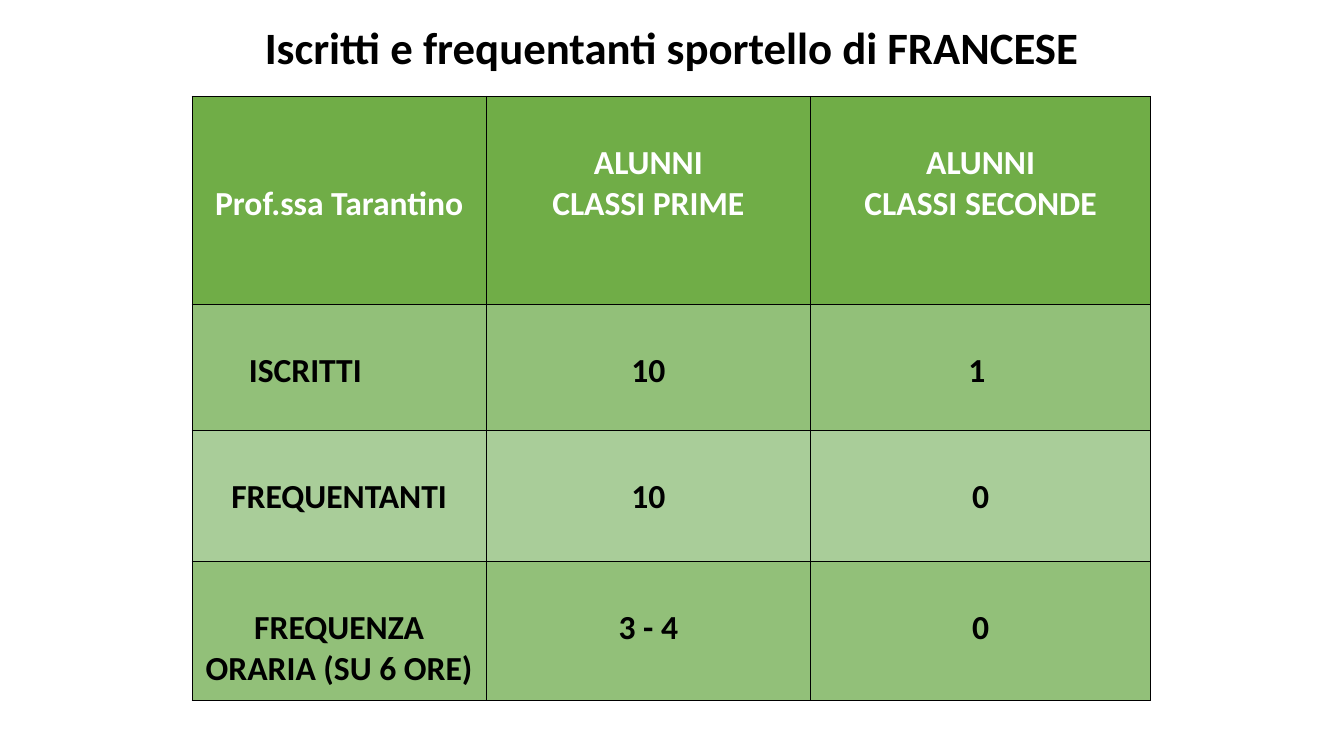
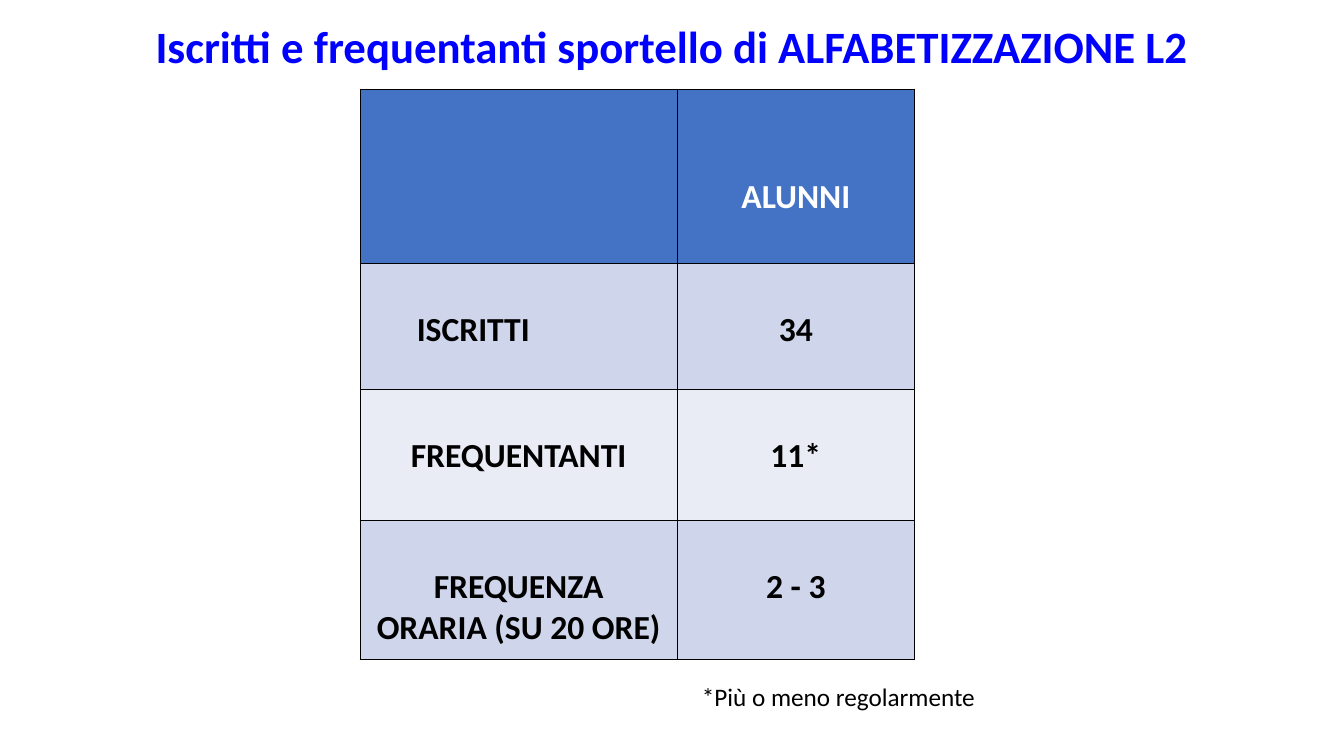
from dataclasses import dataclass

from lxml.etree import SubElement
from pptx import Presentation
from pptx.dml.color import RGBColor
from pptx.enum.text import MSO_ANCHOR, PP_ALIGN
from pptx.oxml.ns import qn
from pptx.slide import Slide
from pptx.table import _Cell
from pptx.text.text import TextFrame
from pptx.util import Emu, Pt

PX = 9525


@dataclass(frozen=True)
class Theme:
    font: str = "Calibri"
    black: str = "000000"
    white: str = "FFFFFF"
    blue: str = "0000FF"
    head: int = 32
    body: int = 24
    note: int = 18
    rule: int = 1
    line: int = 39
    pad: int = 5


@dataclass(frozen=True)
class Box:
    left: int
    top: int
    width: int
    height: int


@dataclass(frozen=True)
class Style:
    size: int
    color: str
    bold: bool = True
    align: PP_ALIGN = PP_ALIGN.CENTER


@dataclass(frozen=True)
class Entry:
    text: str
    lead: int = 1
    inset: int = 0


@dataclass(frozen=True)
class Grid:
    left: int
    top: int
    cols: tuple[int, ...]
    rows: tuple[int, ...]
    fills: tuple[str, ...]
    cells: tuple[tuple[Entry, ...], ...]


@dataclass(frozen=True)
class Page:
    title: str
    color: str
    top: int
    grid: Grid
    note: str = ""


THEME = Theme()
BODY = (120, 125, 132)
NOTE = Box(659, 644, 324, 38)
GREEN = ("70AD47", "92C079", "A9CD99", "92C079")
AZURE = ("4472C4", "CFD5EA", "E9EBF5", "CFD5EA")


def px(count: int) -> Emu:
    return Emu(count * PX)


def body(hours: int, *values: tuple[str, ...]) -> tuple[tuple[Entry, ...], ...]:
    heads = (
        Entry("ISCRITTI", inset=44),
        Entry("FREQUENTANTI"),
        Entry(f"FREQUENZA\nORARIA (SU {hours} ORE)"),
    )
    return tuple((head, *map(Entry, row)) for head, row in zip(heads, values))


PAGES = (
    Page(
        "Iscritti e frequentanti sportello di FRANCESE", THEME.black, 14,
        Grid(
            183, 92, (280, 309, 324), (198, *BODY), GREEN,
            (
                (
                    Entry("Prof.ssa Tarantino", lead=2),
                    Entry("ALUNNI\nCLASSI PRIME"),
                    Entry("ALUNNI\nCLASSI SECONDE"),
                ),
                *body(6, ("10", "1 "), ("10", "0"), ("3 - 4", "0")),
            ),
        ),
    ),
    Page(
        "Iscritti e frequentanti sportello di ALFABETIZZAZIONE L2", THEME.blue, 13,
        Grid(
            343, 85, (302, 226), (166, *BODY), AZURE,
            (
                (Entry(""), Entry("ALUNNI", lead=2)),
                *body(20, ("34",), ("11*",), ("2 - 3",)),
            ),
        ),
        "*Più o meno regolarmente",
    ),
)


def write(frame: TextFrame, text: str, style: Style) -> None:
    frame.text = text
    frame.word_wrap = True
    for para in frame.paragraphs:
        para.alignment = style.align
        for run in para.runs:
            run.font.name = THEME.font
            run.font.size = Pt(style.size)
            run.font.bold = style.bold
            run.font.color.rgb = RGBColor.from_string(style.color)


def label(slide: Slide, box: Box, text: str, style: Style) -> None:
    shape = slide.shapes.add_textbox(
        px(box.left), px(box.top), px(box.width), px(box.height)
    )
    write(shape.text_frame, text, style)


def border(cell: _Cell) -> None:
    props = cell._tc.get_or_add_tcPr()
    for side in ("a:lnL", "a:lnR", "a:lnT", "a:lnB"):
        line = SubElement(props, qn(side), w=str(Pt(THEME.rule)))
        fill = SubElement(line, qn("a:solidFill"))
        SubElement(fill, qn("a:srgbClr"), val=THEME.black)


def paint(cell: _Cell, entry: Entry, fill: str, color: str) -> None:
    border(cell)
    cell.fill.solid()
    cell.fill.fore_color.rgb = RGBColor.from_string(fill)
    cell.vertical_anchor = MSO_ANCHOR.TOP
    cell.margin_top = px(THEME.pad + entry.lead * THEME.line)
    cell.margin_bottom = px(THEME.pad)
    cell.margin_left = px(2 * THEME.pad + entry.inset)
    cell.margin_right = px(2 * THEME.pad)
    align = PP_ALIGN.LEFT if entry.inset else PP_ALIGN.CENTER
    write(cell.text_frame, entry.text, Style(THEME.body, color, align=align))


def draw(slide: Slide, grid: Grid) -> None:
    table = slide.shapes.add_table(
        len(grid.rows), len(grid.cols), px(grid.left), px(grid.top),
        px(sum(grid.cols)), px(sum(grid.rows)),
    ).table
    table.first_row = table.horz_banding = False
    for col, width in zip(table.columns, grid.cols):
        col.width = px(width)
    for row, height in zip(table.rows, grid.rows):
        row.height = px(height)
    for r, (line, fill) in enumerate(zip(grid.cells, grid.fills)):
        color = THEME.black if r else THEME.white
        for c, entry in enumerate(line):
            paint(table.cell(r, c), entry, fill, color)


def main() -> None:
    deck = Presentation()
    deck.slide_width, deck.slide_height = px(1280), px(720)
    for page in PAGES:
        slide = deck.slides.add_slide(deck.slide_layouts[6])
        draw(slide, page.grid)
        title = Box(30, page.top, 1220, 113)
        label(slide, title, page.title, Style(THEME.head, page.color))
        if page.note:
            style = Style(THEME.note, THEME.black, False, PP_ALIGN.LEFT)
            label(slide, NOTE, page.note, style)
    deck.save("out.pptx")


if __name__ == "__main__":
    main()
